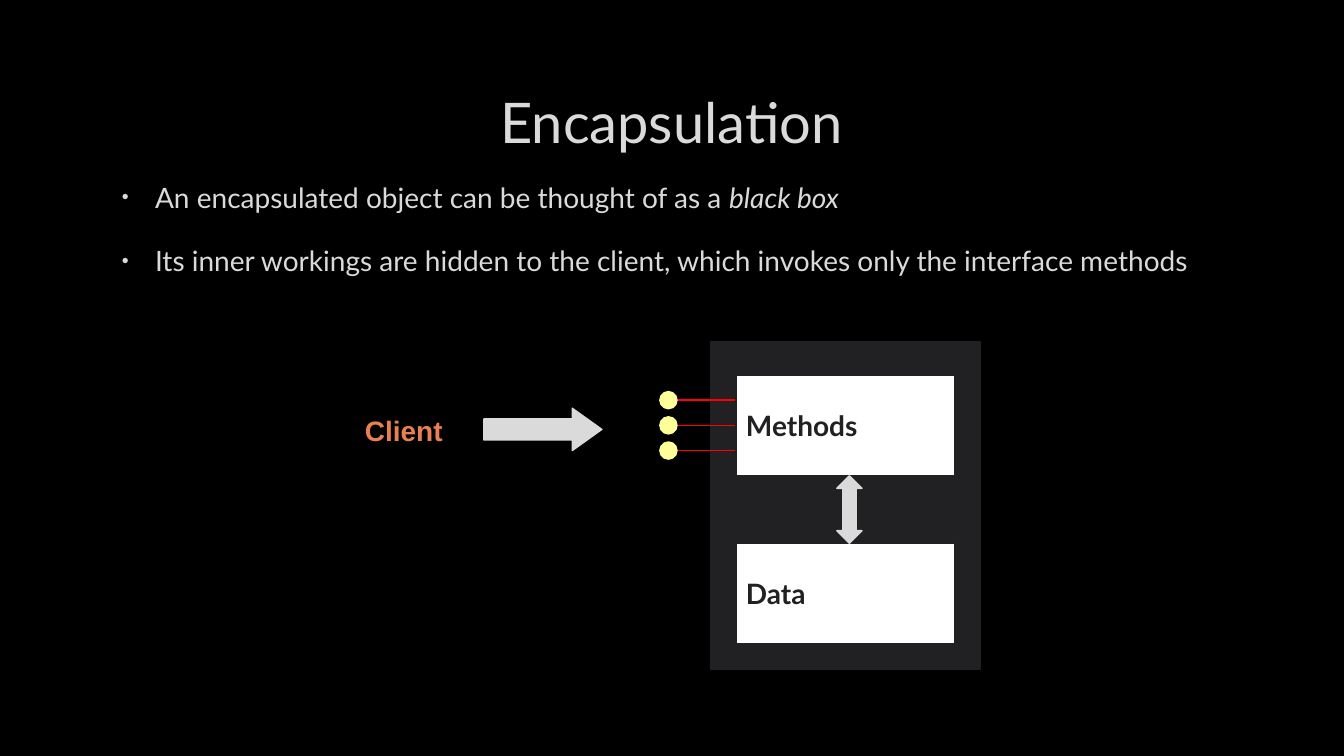
import pptx
import pptx.dml.color
import pptx.enum.shapes
import pptx.enum.text
import pptx.oxml
import pptx.oxml.ns
import pptx.util
from pptx.util import Inches

SHAPE = pptx.enum.shapes.MSO_SHAPE
ALIGN = pptx.enum.text.PP_ALIGN
ANCHOR = pptx.enum.text.MSO_ANCHOR

BLACK, WHITE = "000000", "FFFFFF"
LIGHT, DARK = "DADADA", "212123"
ORANGE, YELLOW, RED = "E98052", "FFFF99", "FF0000"


def rgb(value):
    return pptx.dml.color.RGBColor.from_string(value)


class SlideBuilder:
    """Hold the text style and the slide being filled."""

    font = "Lato"
    size = 20

    def __init__(self, presentation):
        self.slide = presentation.slides.add_slide(presentation.slide_layouts[5])
        background = self.slide.background.fill
        background.solid()
        background.fore_color.rgb = rgb(BLACK)

    def run(self, paragraph, text, color, size=None, font=None, bold=False, italic=False):
        run = paragraph.add_run()
        run.text = text
        run.font.name = font or self.font
        run.font.size = pptx.util.Pt(size or self.size)
        run.font.color.rgb = rgb(color)
        run.font.bold = bold
        run.font.italic = italic

    def title(self, text, left, top, width, height):
        title = self.slide.shapes.title
        title.left, title.top = Inches(left), Inches(top)
        title.width, title.height = Inches(width), Inches(height)
        frame = title.text_frame
        frame.auto_size = pptx.enum.text.MSO_AUTO_SIZE.NONE
        frame.vertical_anchor = ANCHOR.MIDDLE
        frame.paragraphs[0].alignment = ALIGN.CENTER
        self.run(frame.paragraphs[0], text, LIGHT, size=40)

    def bullets(self, items, left, top, width, height):
        """Add a bulleted list; each item is a list of (text, italic) runs."""
        box = self.slide.shapes.add_textbox(
            Inches(left), Inches(top), Inches(width), Inches(height))
        frame = box.text_frame
        frame.word_wrap = True
        for index, item in enumerate(items):
            paragraph = frame.add_paragraph() if index else frame.paragraphs[0]
            paragraph.space_after = pptx.util.Pt(21)
            properties = paragraph._p.get_or_add_pPr()
            properties.set("marL", str(Inches(0.38)))
            properties.set("indent", str(Inches(-0.33)))
            namespace = pptx.oxml.ns.nsdecls("a")
            for xml in (
                f'<a:buClr {namespace}><a:srgbClr val="{LIGHT}"/></a:buClr>',
                f'<a:buSzPct {namespace} val="70000"/>',
                f'<a:buFont {namespace} typeface="Arial"/>',
                f'<a:buChar {namespace} char="•"/>',
            ):
                properties.append(pptx.oxml.parse_xml(xml))
            for text, italic in item:
                self.run(paragraph, text, LIGHT, italic=italic)

    def label(self, text, left, top, width, height, color, font):
        box = self.slide.shapes.add_textbox(
            Inches(left), Inches(top), Inches(width), Inches(height))
        frame = box.text_frame
        frame.word_wrap = False
        frame.vertical_anchor = ANCHOR.MIDDLE
        self.run(frame.paragraphs[0], text, color, font=font, bold=True)

    def shape(self, kind, left, top, width, height, fill, line=None, adjustments=(), text=None):
        shape = self.slide.shapes.add_shape(
            kind, Inches(left), Inches(top), Inches(width), Inches(height))
        shape.shadow.inherit = False
        shape.fill.solid()
        shape.fill.fore_color.rgb = rgb(fill)
        shape.line.color.rgb = rgb(line or fill)
        shape.line.width = pptx.util.Pt(1)
        for index, value in enumerate(adjustments):
            shape.adjustments[index] = value
        if text:
            frame = shape.text_frame
            frame.word_wrap = False
            frame.vertical_anchor = ANCHOR.MIDDLE
            frame.paragraphs[0].alignment = ALIGN.LEFT
            self.run(frame.paragraphs[0], text, DARK, bold=True)

    def line(self, start_x, start_y, end_x, end_y, color):
        connector = self.slide.shapes.add_connector(
            pptx.enum.shapes.MSO_CONNECTOR.STRAIGHT,
            Inches(start_x), Inches(start_y), Inches(end_x), Inches(end_y))
        connector.line.color.rgb = rgb(color)
        connector.line.width = pptx.util.Pt(1)
        connector._element.spPr.append(
            pptx.oxml.parse_xml(f'<a:effectLst {pptx.oxml.ns.nsdecls("a")}/>'))


def main():
    presentation = pptx.Presentation()
    presentation.slide_width = Inches(13.33)
    presentation.slide_height = Inches(7.5)
    builder = SlideBuilder(presentation)

    builder.title("Encapsulation", 1, 0.67, 11.32, 1.06)
    builder.bullets([
        [("An encapsulated object can be thought of as a ", False), ("black box", True)],
        [("Its inner workings are hidden to the client, "
          "which invokes only the interface methods", False)],
    ], 1.06, 1.74, 11.63, 1.75)

    builder.shape(SHAPE.RECTANGLE, 7.05, 3.39, 2.67, 3.25, DARK)

    box_left, box_width, box_height = 7.3, 2.17, 1
    port_size, port_center = 0.17, 6.63
    for index in range(3):
        port_y = 3.97 + 0.25 * index
        builder.line(box_left, port_y, port_center, port_y, RED)
        builder.shape(SHAPE.OVAL, port_center - port_size / 2, port_y - port_size / 2,
                      port_size, port_size, YELLOW)

    builder.label("Client", 3.52, 4.05, 0.97, 0.43, ORANGE, "Arial")
    builder.shape(SHAPE.RIGHT_ARROW, 4.8, 4.05, 1.17, 0.42, LIGHT, adjustments=(0.5, 0.7))

    for text, top in (("Methods", 3.72), ("Data", 5.39)):
        builder.shape(SHAPE.RECTANGLE, box_left, top, box_width, box_height,
                      WHITE, line=DARK, text=text)
    builder.shape(SHAPE.UP_DOWN_ARROW, 8.3, 4.72, 0.25, 0.67, LIGHT, adjustments=(0.5, 0.53))

    presentation.save("out.pptx")


if __name__ == "__main__":
    main()
